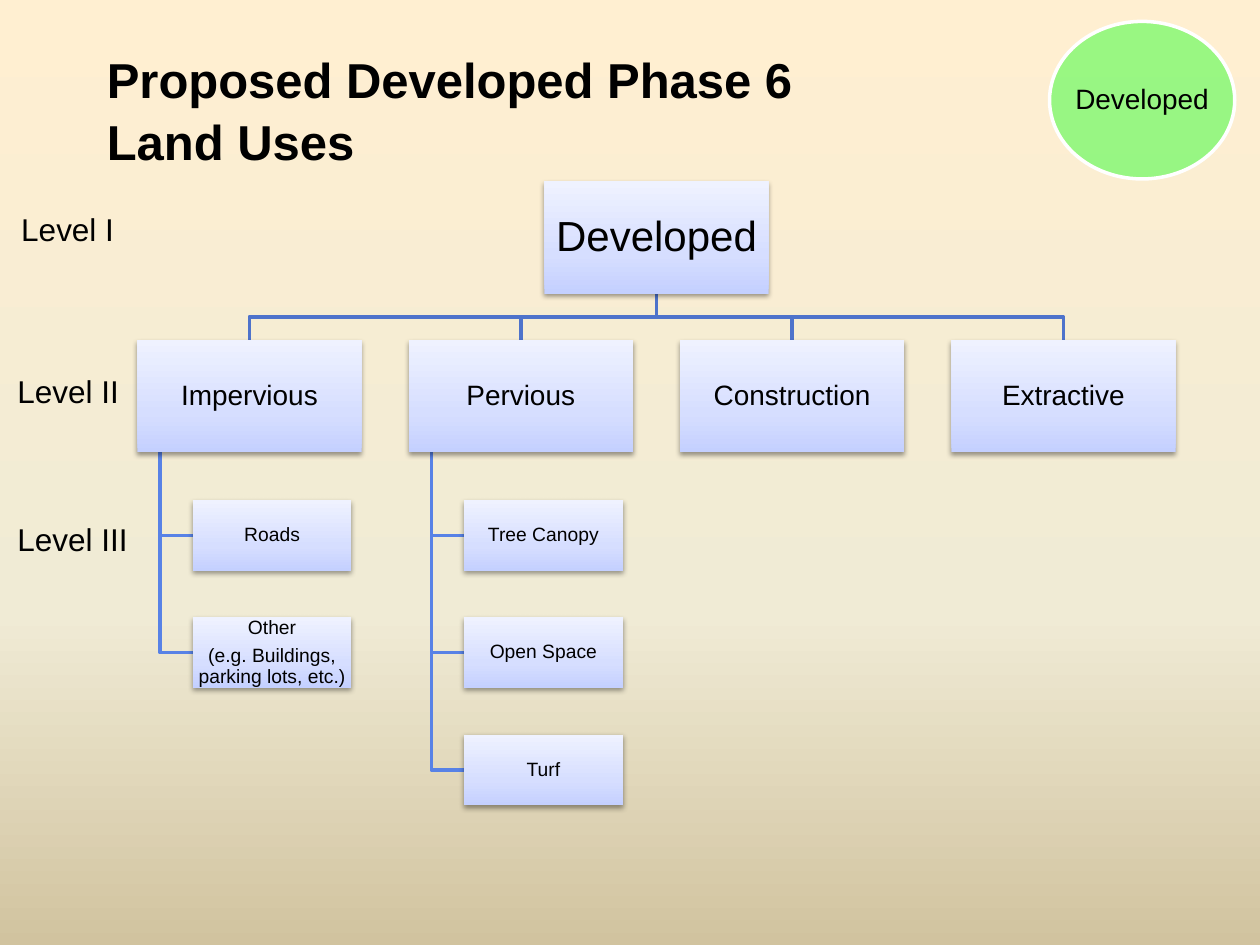
from pptx import Presentation
from pptx.dml.color import RGBColor
from pptx.enum.shapes import MSO_SHAPE
from pptx.enum.text import MSO_ANCHOR, PP_ALIGN
from pptx.oxml import parse_xml
from pptx.oxml.ns import nsdecls, qn
from pptx.util import Inches, Pt

RECT, OVAL = MSO_SHAPE.RECTANGLE, MSO_SHAPE.OVAL
TOP, MIDDLE = MSO_ANCHOR.TOP, MSO_ANCHOR.MIDDLE
LEFT, CENTER = PP_ALIGN.LEFT, PP_ALIGN.CENTER

TITLE = "Proposed Developed Phase 6 Land Uses"
ROOT = "Developed"
LEVELS = [("Level I", 0.07, 1.62), ("Level II", 0.04, 2.9), ("Level III", 0.04, 4.08)]
BRANCHES = [
    ("Impervious", ["Roads", "Other\n(e.g. Buildings, parking lots, etc.)"]),
    ("Pervious", ["Tree Canopy", "Open Space", "Turf"]),
    ("Construction", []),
    ("Extractive", []),
]
BACKDROP = [(0, "FFEFD1"), (65, "F0EBD5"), (100, "D1C39F")]
BOX_FILL = [(0, "C4D0FF"), (35, "D6DEFF"), (100, "EFF2FF")]
BRANCH_LINE, LEAF_LINE = "4E73CB", "5882E6"

BOX_W, BOX_H = 1.78, 0.89
LEAF_W, LEAF_H = 1.26, 0.56
ROOT_Y, BRANCH_Y, LEAF_Y = 1.44, 2.7, 3.97
BRANCH_X, LAST_BRANCH_X = 1.09, 7.55
COL_STEP = (LAST_BRANCH_X - BRANCH_X) / (len(BRANCHES) - 1)
ROW_STEP = 0.93
SPINE_DX, LEAF_DX = 0.18, 0.44


def color(value):
    return RGBColor.from_string(value)


def set_gradient(fill, parent, stops, angle):
    fill.solid()
    gs = "".join(
        f'<a:gs pos="{pos * 1000}"><a:srgbClr val="{value}"/></a:gs>' for pos, value in stops
    )
    grad = parse_xml(
        f'<a:gradFill {nsdecls("a")} rotWithShape="1"><a:gsLst>{gs}</a:gsLst>'
        f'<a:lin ang="{angle * 60000}" scaled="0"/></a:gradFill>'
    )
    parent.replace(parent.find(qn("a:solidFill")), grad)


def set_text(sp, text, size, bold=False, align=CENTER, anchor=MIDDLE, inset=0.01,
             wrap=True, spacing=0.9, after=0):
    tf = sp.text_frame
    tf.word_wrap = wrap
    tf.vertical_anchor = anchor
    if inset is not None:
        tf.margin_left = tf.margin_right = tf.margin_top = tf.margin_bottom = Inches(inset)
    tf.text = text
    for p in tf.paragraphs:
        p.alignment = align
        p.line_spacing = spacing
        p.space_after = Pt(after)
        p.font.name = "Arial"
        p.font.size = Pt(size)
        p.font.bold = bold
        p.font.color.rgb = color("000000")


def add_label(s, text, x, y, w, h, size, **fmt):
    sp = s.shapes.add_textbox(Inches(x), Inches(y), Inches(w), Inches(h))
    set_text(sp, text, size, align=LEFT, anchor=TOP, inset=None, **fmt)


def add_box(s, text, x, y, w, h, size, **fmt):
    sp = s.shapes.add_shape(RECT, Inches(x), Inches(y), Inches(w), Inches(h))
    set_gradient(sp.fill, sp.element.spPr, BOX_FILL, 270)
    sp.line.fill.background()
    sp.element.spPr.append(parse_xml(
        f'<a:effectLst {nsdecls("a")}><a:outerShdw blurRad="{Pt(3.1)}" dist="{Pt(1.6)}" '
        'dir="5400000" rotWithShape="0"><a:srgbClr val="000000"><a:alpha val="38000"/>'
        '</a:srgbClr></a:outerShdw></a:effectLst>'
    ))
    set_text(sp, text, size, after=round(size * 0.35, 1), **fmt)


def add_path(s, points, line):
    start, *rest = [(Inches(x), Inches(y)) for x, y in points]
    builder = s.shapes.build_freeform(*start)
    builder.add_line_segments(rest, close=False)
    sp = builder.convert_to_shape()
    sp.shadow.inherit = False
    sp.fill.background()
    sp.line.color.rgb = color(line)
    sp.line.width = Pt(2)


def add_badge(s):
    sp = s.shapes.add_shape(OVAL, Inches(8.33), Inches(0.17), Inches(1.47), Inches(1.25))
    sp.shadow.inherit = False
    sp.fill.solid()
    sp.fill.fore_color.rgb = color("35FF35")
    tint = sp.element.spPr.find(qn("a:solidFill"))[0]
    tint.append(parse_xml(f'<a:alpha {nsdecls("a")} val="50000"/>'))
    sp.line.color.rgb = color("FFFFFF")
    sp.line.width = Pt(2)
    set_text(sp, ROOT, 16, inset=0, wrap=False)


def add_tree(s):
    center = (BRANCH_X + LAST_BRANCH_X + BOX_W) / 2
    root_bottom = ROOT_Y + BOX_H
    bus_y = (root_bottom + BRANCH_Y) / 2
    columns = [(BRANCH_X + i * COL_STEP, *branch) for i, branch in enumerate(BRANCHES)]
    rows = [LEAF_Y + i * ROW_STEP for i in range(max(len(b[1]) for b in BRANCHES))]

    for x, _, leaves in columns:
        mid = x + BOX_W / 2
        add_path(s, [(center, root_bottom), (center, bus_y), (mid, bus_y), (mid, BRANCH_Y)],
                 BRANCH_LINE)
        spine = x + SPINE_DX
        for y, _ in zip(rows, leaves):
            leaf_mid = y + LEAF_H / 2
            add_path(s, [(spine, BRANCH_Y + BOX_H), (spine, leaf_mid), (x + LEAF_DX, leaf_mid)],
                     LEAF_LINE)

    add_box(s, ROOT, center - BOX_W / 2, ROOT_Y, BOX_W, BOX_H, 24, inset=0.02)
    for x, name, leaves in columns:
        add_box(s, name, x, BRANCH_Y, BOX_W, BOX_H, 16)
        for y, leaf in zip(rows, leaves):
            add_box(s, leaf, x + LEAF_DX, y, LEAF_W, LEAF_H, 11)


def main():
    """Build the land use hierarchy slide."""
    prs = Presentation()
    prs.slide_width, prs.slide_height = Inches(10), Inches(7.5)
    s = prs.slides.add_slide(prs.slide_layouts[6])
    fill = s.background.fill
    fill.solid()
    set_gradient(fill, s.element.find(".//" + qn("p:bgPr")), BACKDROP, 90)
    add_label(s, TITLE, 0.75, 0.32, 6.65, 0.99, 28, bold=True, spacing=1.05)
    add_tree(s)
    for text, x, y in LEVELS:
        add_label(s, text, x, y, 1.32, 0.4, 18, spacing=1)
    add_badge(s)
    prs.save("out.pptx")


if __name__ == "__main__":
    main()
